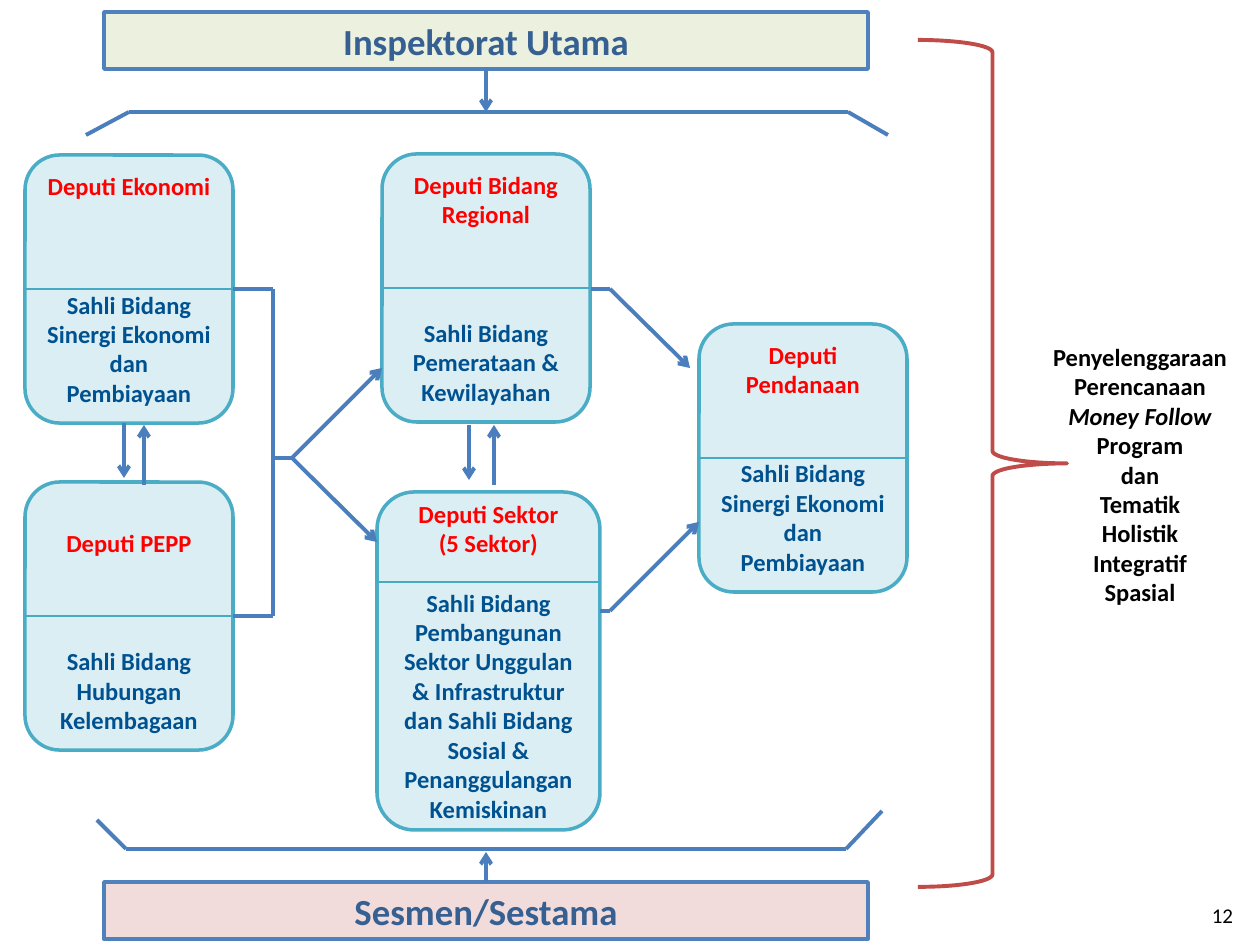
from itertools import pairwise

from lxml import etree
from pptx import Presentation
from pptx import util as u
from pptx.dml.color import RGBColor
from pptx.enum import shapes, text
from pptx.oxml.ns import qn

SCALE = 914400 / 126  # EMU in one px
FONT = "Calibri"
LINE_PT = 17  # height of one 14 pt line
LINE_PX = 30
COLORS = {
    "bar_line": "4F81BD", "bar_text": "376092", "top": "EBF1DE", "bottom": "F2DCDB",
    "card": "DBEEF4", "card_line": "4BACC6", "divider": "46AAC5",
    "title": "FF0000", "body": "00518F",
    "flow": "4B7EBC", "brace": "BF4C48", "black": "000000",
}
SHAPE = shapes.MSO_SHAPE
ANCHOR = text.MSO_ANCHOR
ALIGN = text.PP_ALIGN


def px(n):
    return round(n * SCALE)


def rgb(name):
    return RGBColor.from_string(COLORS[name])


def add_box(s, kind, box, fill, line, width=2):
    sp = s.shapes.add_shape(kind, *map(px, box))
    sp.shadow.inherit = False
    if fill:
        sp.fill.solid()
        sp.fill.fore_color.rgb = rgb(fill)
    else:
        sp.fill.background()
    sp.line.color.rgb = rgb(line)
    sp.line.width = u.Pt(width)
    return sp


def setup_text(sp, anchor=ANCHOR.MIDDLE, lead=0):
    """Set wrap, anchor and margins; lead is extra room at the top in px."""
    tf = sp.text_frame
    tf.word_wrap = True
    tf.vertical_anchor = anchor
    tf.margin_left = tf.margin_right = px(12)
    tf.margin_top, tf.margin_bottom = px(6 + lead), px(6)
    return tf


def add_par(tf, runs, color, size=14, bold=True, align=ALIGN.CENTER, gap=0):
    """Add a paragraph of (words, italic) runs, gap lines below the last one."""
    p = tf.paragraphs[0]
    if p.runs:
        p = tf.add_paragraph()
    p.alignment = align
    if gap:
        p.space_before = u.Pt(gap * LINE_PT)
    for words, italic in runs:
        r = p.add_run()
        r.text = words
        r.font.name, r.font.size = FONT, u.Pt(size)
        r.font.bold, r.font.italic = bold, italic
        r.font.color.rgb = rgb(color)


def add_path(s, origin, points, arrow=False, color="flow", width=2.25):
    """Join points, relative to origin, by lines; arrow marks the last end."""
    x, y = origin
    for (x1, y1), (x2, y2) in pairwise(points):
        c = s.shapes.add_connector(shapes.MSO_CONNECTOR.STRAIGHT,
                                   px(x + x1), px(y + y1), px(x + x2), px(y + y2))
        c.line.color.rgb = rgb(color)
        c.line.width = u.Pt(width)
        etree.SubElement(c._element.spPr, qn("a:effectLst"))
    if arrow:
        etree.SubElement(c.line._get_or_add_ln(), qn("a:tailEnd"), type="arrow")


def add_bar(s, box, label, fill, arrow, bracket):
    """Label bar with an arrow to an open bracket."""
    sp = add_box(s, SHAPE.RECTANGLE, box, fill, "bar_line")
    add_par(setup_text(sp), [(label, False)], "bar_text", size=21)
    middle = box[2] // 2
    add_path(s, box[:2], [(middle, y) for y in arrow], arrow=True)
    add_path(s, box[:2], bracket)


def add_card(s, box, titles, body, gap, lead=0, divider=None):
    """Rounded card: red title above the divider, blue text below."""
    x, y, w, h = box
    sp = add_box(s, SHAPE.ROUNDED_RECTANGLE, box, "card", "card_line")
    tf = setup_text(sp, lead=lead * LINE_PX)
    for title in titles:
        add_par(tf, [(title, False)], "title")
    add_par(tf, [(body, False)], "body", gap=gap)
    cut = divider or h // 2
    add_path(s, (x, y), [(0, cut), (w, cut)], color="divider", width=1.5)


def add_flow(s, origin):
    """Lines and arrows between the cards."""
    # Two-way exchanges between stacked cards
    for down, up, top in ((99, 119, 269), (444, 469, 271)):
        add_path(s, origin, [(down, top), (down, top + 55)], arrow=True)
        add_path(s, origin, [(up, 331), (up, 271)], arrow=True)
    # Left cards join and fork to the middle column
    add_path(s, origin, [(208, 135), (248, 135), (248, 462), (208, 462)])
    add_path(s, origin, [(248, 304), (267, 304)])
    for end in ((357, 214), (352, 388)):
        add_path(s, origin, [(267, 304), end], arrow=True)
    # Middle column to funding
    add_path(s, origin, [(566, 135), (585, 135), (665, 214)], arrow=True)
    add_path(s, origin, [(575, 457), (585, 457), (674, 368)], arrow=True)


def add_outcome(s, box):
    """Brace and the result it leads to."""
    x, y, w, h = box
    add_box(s, SHAPE.RIGHT_BRACE, (x, y, 149, h), None, "brace", 2.25)
    tb = s.shapes.add_textbox(px(x + 113), px(y + 296), px(w - 113), px(280))
    tf = setup_text(tb, ANCHOR.TOP)
    for words in ("Penyelenggaraan", "Perencanaan"):
        add_par(tf, [(words, False)], "black")
    add_par(tf, [("Money Follow", True), (" Program", False)], "black")
    for words in ("dan", "Tematik", "Holistik", "Integratif", "Spasial"):
        add_par(tf, [(words, False)], "black")


def add_page_number(s, box, number):
    tf = setup_text(s.shapes.add_textbox(*map(px, box)))
    add_par(tf, [(number, False)], "black", size=12, bold=False, align=ALIGN.RIGHT)


def main():
    prs = Presentation()
    prs.slide_width, prs.slide_height = px(1260), px(945)
    s = prs.slides.add_slide(prs.slide_layouts[6])

    # Supervising and supporting bars
    add_bar(s, (104, 12, 764, 57), "Inspektorat Utama", "top", (57, 100),
            [(-18, 123), (25, 100), (744, 100), (784, 123)])
    add_bar(s, (104, 882, 764, 57), "Sesmen/Sestama", "bottom", (0, -30),
            [(-7, -62), (22, -33), (742, -33), (778, -71)])

    # Deputy cards
    synergy = "Sahli Bidang Sinergi Ekonomi dan Pembiayaan"
    add_card(s, (25, 155, 208, 268), ["Deputi Ekonomi"], synergy, gap=3)
    add_card(s, (25, 482, 208, 268), ["Deputi PEPP"],
             "Sahli Bidang Hubungan Kelembagaan", gap=3, lead=1)
    add_card(s, (382, 154, 208, 268), ["Deputi Bidang Regional"],
             "Sahli Bidang Pemerataan & Kewilayahan", gap=3)
    add_card(s, (377, 492, 223, 338), ["Deputi Sektor", "(5 Sektor)"],
             "Sahli Bidang Pembangunan Sektor Unggulan & Infrastruktur dan "
             "Sahli Bidang Sosial & Penanggulangan Kemiskinan", gap=1, divider=90)
    add_card(s, (699, 324, 208, 268), ["Deputi Pendanaan"], synergy, gap=2)

    add_flow(s, (25, 154))
    add_outcome(s, (918, 40, 331, 847))
    add_page_number(s, (1140, 890, 105, 50), "12")
    prs.save("out.pptx")


if __name__ == "__main__":
    main()
